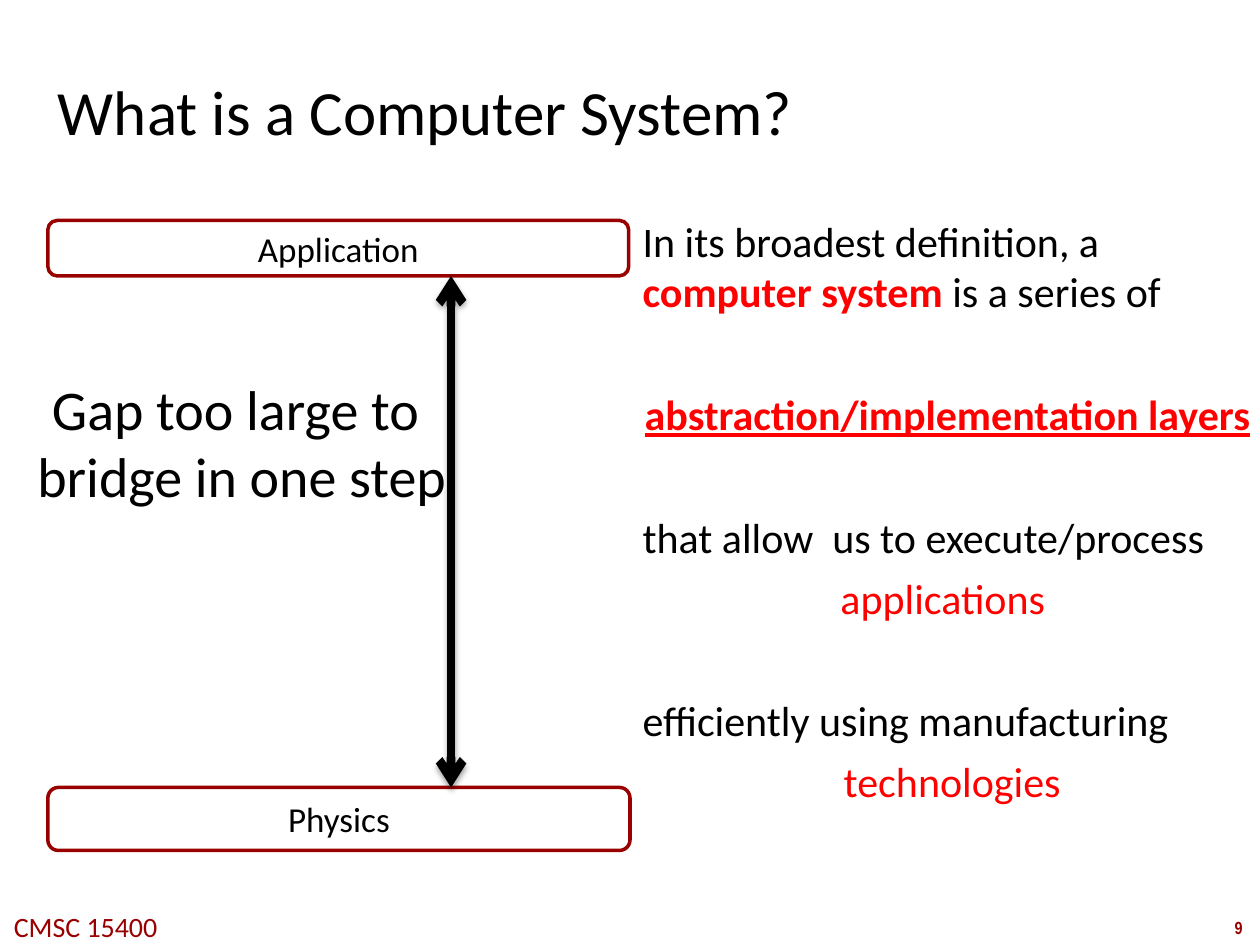
"""Build the slide that defines a computer system as layers between application and physics."""
import pptx
import pptx.dml.color
import pptx.enum.shapes
import pptx.enum.text
import pptx.oxml
import pptx.util
from pptx.util import Inches, Pt

BLACK, RED, MAROON, WHITE = "000000", "FF0000", "990000", "FFFFFF"
LEFT = pptx.enum.text.PP_ALIGN.LEFT
CENTER = pptx.enum.text.PP_ALIGN.CENTER
MIDDLE = pptx.enum.text.MSO_ANCHOR.MIDDLE
TOP = pptx.enum.text.MSO_ANCHOR.TOP

TITLE = "What is a Computer System?"
NEAR, FAR = 6, 41.3
DEFINITION = [
    (LEFT, 0, [("In its broadest definition, a ", {}),
               ("computer system ", {"color": RED, "bold": True}),
               ("is a series of", {})]),
    (CENTER, FAR, [("abstraction/implementation layers",
                    {"color": RED, "bold": True, "underline": True})]),
    (LEFT, FAR, [("that allow  us to execute/process", {})]),
    (CENTER, NEAR, [("applications ", {"color": RED})]),
    (LEFT, FAR, [("efficiently using manufacturing", {})]),
    (CENTER, NEAR, [(" technologies", {"color": RED})]),
]
LAYERS = [("Application", (0.38, 1.75, 4.61, 0.44)), ("Physics", (0.38, 6.25, 4.62, 0.5))]
LABELS = [
    (["Gap too large to ", "bridge in one step"], (0.18, 2.92, 3.48, 1.18), {"size": 32}),
    (["CMSC 15400"], (-0.03, 7.17, 1.42, 0.37), {"size": 16, "color": MAROON}),
    (["9"], (9.66, 7.23, 0.34, 0.27),
     {"size": 10, "color": MAROON, "bold": True, "name": "Arial Narrow"}),
]
ARROW_X = 3.58
ARROW_ENDS = '<a:{} xmlns:a="http://schemas.openxmlformats.org/drawingml/2006/main" type="arrow"/>'
ARROW_SHADOW = (
    '<a:effectLst xmlns:a="http://schemas.openxmlformats.org/drawingml/2006/main">'
    '<a:outerShdw blurRad="39370" dist="22860" dir="5400000" rotWithShape="0">'
    '<a:srgbClr val="000000"><a:alpha val="35000"/></a:srgbClr></a:outerShdw></a:effectLst>'
)


def rgb(value):
    """Turn a hex string into a colour."""
    return pptx.dml.color.RGBColor.from_string(value)


def style(font, size, color=BLACK, bold=False, underline=False, name="Calibri"):
    """Format one font."""
    font.size, font.name = Pt(size), name
    font.bold, font.underline = bold, underline
    font.color.rgb = rgb(color)


def set_frame(frame, wrap, anchor, inset_x, inset_y):
    """Set the wrapping, anchor and insets of a text frame."""
    frame.word_wrap, frame.vertical_anchor = wrap, anchor
    frame.auto_size = pptx.enum.text.MSO_AUTO_SIZE.NONE
    frame.margin_left = frame.margin_right = Inches(inset_x)
    frame.margin_top = frame.margin_bottom = Inches(inset_y)


def write_lines(frame, lines, **font):
    """Write centred lines in one font."""
    frame.text = "\n".join(lines)
    for paragraph in frame.paragraphs:
        paragraph.alignment = CENTER
        for run in paragraph.runs:
            style(run.font, **font)


def add_title(slide):
    """Place and format the title."""
    title = slide.shapes.title
    title.left, title.top, title.width, title.height = map(Inches, (0.42, 0.28, 9.17, 1.19))
    set_frame(title.text_frame, True, MIDDLE, 0.04, 0.04)
    write_lines(title.text_frame, [TITLE], size=36)
    title.text_frame.paragraphs[0].alignment = LEFT


def add_definition(slide):
    """Add the definition, spaced by paragraph spacing."""
    frame = slide.shapes.add_textbox(*map(Inches, (5.06, 1.67, 4.92, 4.83))).text_frame
    set_frame(frame, True, TOP, 0.04, 0.04)
    for index, (alignment, space, runs) in enumerate(DEFINITION):
        paragraph = frame.add_paragraph() if index else frame.paragraphs[0]
        paragraph.alignment, paragraph.space_before = alignment, Pt(space)
        for text, font in runs:
            run = paragraph.add_run()
            run.text = text
            style(run.font, 24, **font)


def add_layer(slide, name, box):
    """Add one outlined layer bar."""
    kind = pptx.enum.shapes.MSO_SHAPE.ROUNDED_RECTANGLE
    shape = slide.shapes.add_shape(kind, *map(Inches, box))
    shape.shadow.inherit = False
    shape.fill.solid()
    shape.fill.fore_color.rgb = rgb(WHITE)
    shape.line.color.rgb = rgb(MAROON)
    shape.line.width = Pt(2)
    set_frame(shape.text_frame, False, MIDDLE, 0.1, 0.05)
    write_lines(shape.text_frame, [name], size=20)


def add_gap_arrow(slide):
    """Join the two layers with a double-headed arrow."""
    upper, lower = (box for _, box in LAYERS)
    arrow = slide.shapes.add_connector(
        pptx.enum.shapes.MSO_CONNECTOR.STRAIGHT,
        *map(Inches, (ARROW_X, upper[1] + upper[3], ARROW_X, lower[1])))
    arrow.line.color.rgb = rgb(BLACK)
    arrow.line.width = Pt(5)
    line = arrow.line._get_or_add_ln()
    for end in ("headEnd", "tailEnd"):
        line.append(pptx.oxml.parse_xml(ARROW_ENDS.format(end)))
    arrow._element.spPr.append(pptx.oxml.parse_xml(ARROW_SHADOW))


def main():
    """Build and save the slide."""
    presentation = pptx.Presentation()
    presentation.slide_width, presentation.slide_height = Inches(10), Inches(7.5)
    slide = presentation.slides.add_slide(presentation.slide_layouts[5])
    add_title(slide)
    add_definition(slide)
    for name, box in LAYERS:
        add_layer(slide, name, box)
    add_gap_arrow(slide)
    for lines, box, font in LABELS:
        frame = slide.shapes.add_textbox(*map(Inches, box)).text_frame
        set_frame(frame, False, TOP, 0.1, 0.05)
        write_lines(frame, lines, **font)
    presentation.save("out.pptx")


if __name__ == "__main__":
    main()
